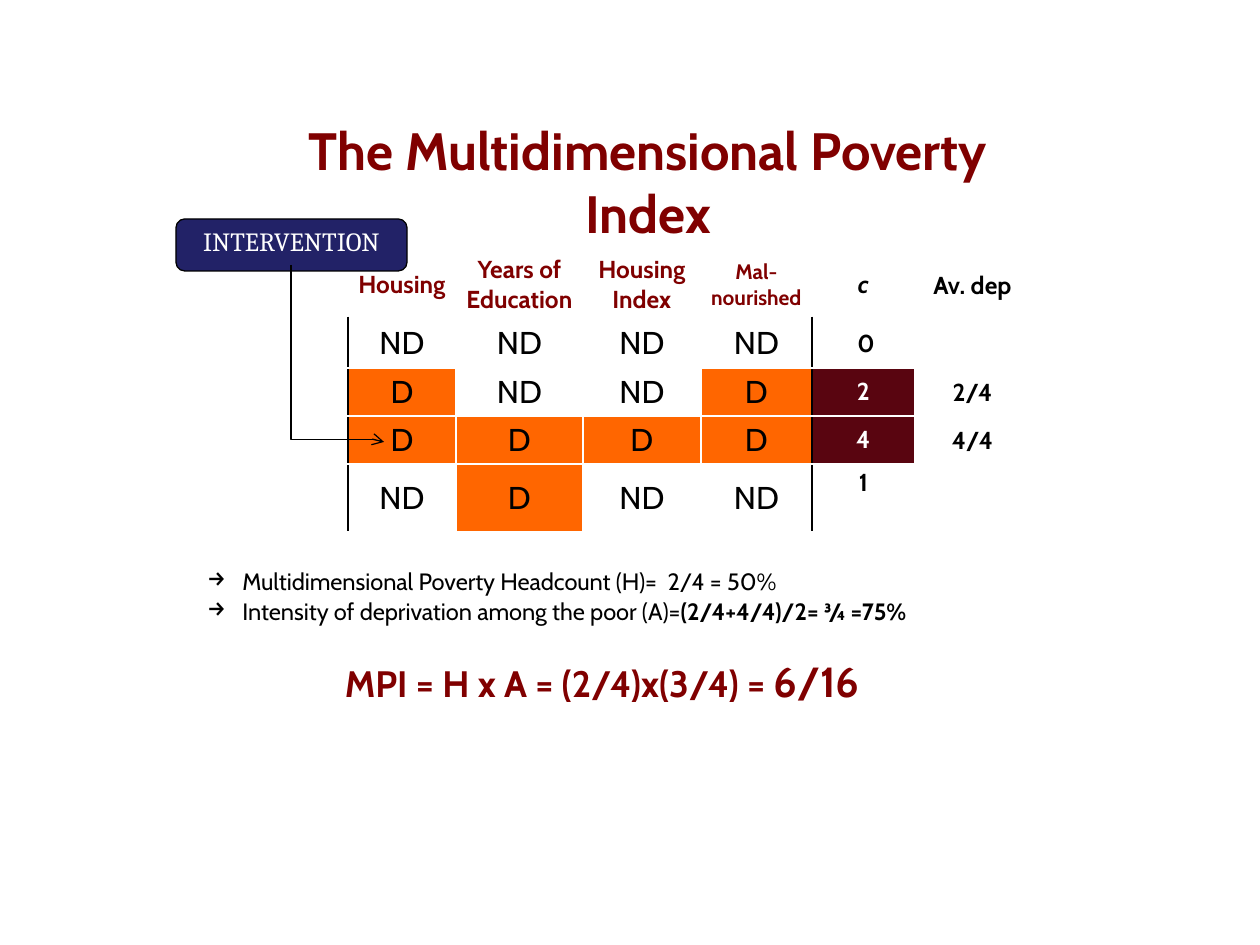
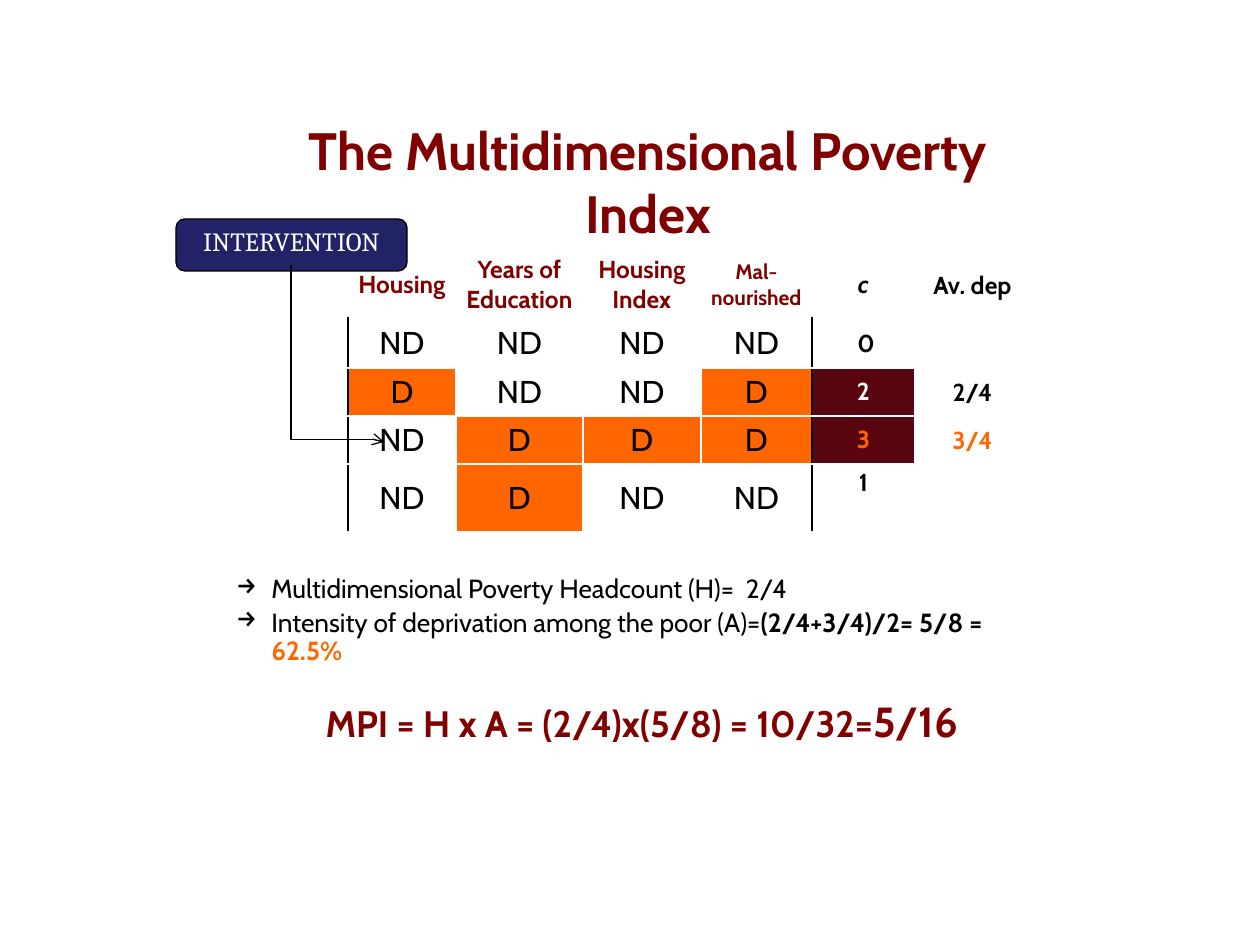
from dataclasses import dataclass
from itertools import product
from typing import NamedTuple

from lxml.etree import SubElement
from pptx import Presentation
from pptx.dml.color import RGBColor
from pptx.enum.shapes import MSO_CONNECTOR, MSO_SHAPE
from pptx.enum.text import MSO_ANCHOR, PP_ALIGN
from pptx.oxml.ns import qn
from pptx.util import Emu, Pt

EMU_PER_PX = 914400 / 126
PAGE_SIZE = (1260, 945)

MAROON = RGBColor(0x80, 0x00, 0x00)
WINE = RGBColor(0x59, 0x05, 0x10)
ORANGE = RGBColor(0xFF, 0x66, 0x00)
NAVY = RGBColor(0x22, 0x22, 0x67)
BLACK = RGBColor(0x00, 0x00, 0x00)
WHITE = RGBColor(0xFF, 0xFF, 0xFF)

MATRIX_ORIGIN = (274, 251)
MATRIX_COLUMNS = [74, 108, 127, 118, 111, 103]
MATRIX_ROWS = [68, 49, 48, 48, 68, 48]
AVERAGE_ORIGIN = (921, 252)
AVERAGE_COLUMNS = [103]
CELL_INSETS = {"margin_left": 9, "margin_right": 9, "margin_top": 4, "margin_bottom": 4}
DIMENSIONS = ["Housing", "Years of Education", "Housing Index", "Mal-nourished"]
PERSON_ROWS = range(1, 5)
POVERTY_CUTOFF = 2
BULLET_INDENT = 35


class Frame(NamedTuple):
    left: int
    top: int
    width: int
    height: int


class Span(NamedTuple):
    text: str
    size: float
    color: RGBColor = BLACK
    bold: bool = False
    italic: bool = False
    name: str = "Cabin"


@dataclass
class Scenario:
    """What changes in the index when the intervention reaches the third person."""
    third_person: list[str]
    average: str
    changed_color: RGBColor | None
    findings_frame: Frame
    findings_size: float
    headcount: str
    intensity: list[Span]
    index: list[Span]


SCENARIOS = [
    Scenario(
        ["D", "D", "D", "D"], "4/4", None,
        Frame(195, 564, 867, 155), 13.5,
        "Multidimensional Poverty Headcount (H)=  2/4 = 50%",
        [Span("(2/4+4/4)/2= ¾ =75%", 13.5, bold=True)],
        [Span("MPI = H x A = (2/4)x(3/4) = ", 21, MAROON, True),
         Span("6/16", 24, MAROON, True), Span("\t", 21, MAROON, True)],
    ),
    Scenario(
        ["ND", "D", "D", "D"], "3/4", ORANGE,
        Frame(224, 570, 844, 161), 15,
        "Multidimensional Poverty Headcount (H)=  2/4",
        [Span("(2/4+3/4)/2= 5/8 = ", 15, bold=True), Span("62.5%", 15, ORANGE, True)],
        [Span("MPI = H x A = (2/4)x(5/8) = 10/32=", 21, MAROON, True),
         Span("5/16", 24, MAROON, True), Span(" ", 21, MAROON, True)],
    ),
]


def px(length: float) -> Emu:
    return Emu(round(length * EMU_PER_PX))


def set_attributes(target, values: dict) -> None:
    for name, value in values.items():
        setattr(target, name, value)


def add_spans(para, spans: list[Span], **paragraph_format) -> None:
    set_attributes(para, paragraph_format)
    for span in spans:
        run = para.add_run()
        run.text = span.text
        font_format = span._asdict() | {"size": Pt(span.size)}
        del font_format["text"], font_format["color"]
        set_attributes(run.font, font_format)
        run.font.color.rgb = span.color


def add_text_box(page, frame: Frame):
    text = page.shapes.add_textbox(*map(px, frame)).text_frame
    text.word_wrap = True
    return text


def add_title(page) -> None:
    text = add_text_box(page, Frame(228, 122, 840, 118))
    text.vertical_anchor = MSO_ANCHOR.MIDDLE
    title = Span("The Multidimensional Poverty Index", 30, MAROON, True)
    add_spans(text.paragraphs[0], [title], alignment=PP_ALIGN.CENTER)


def add_plain_table(page, origin: tuple[int, int], columns: list[int], rows: list[int]):
    """Add a table without banding or fills and return it."""
    frame = Frame(*origin, sum(columns), sum(rows))
    table = page.shapes.add_table(len(rows), len(columns), *map(px, frame)).table
    set_attributes(table, {"first_row": False, "horz_banding": False})
    for column, width in zip(table.columns, columns):
        column.width = px(width)
    for row, height in zip(table.rows, rows):
        row.height = px(height)
    for cell in table.iter_cells():
        set_attributes(cell, {name: px(inset) for name, inset in CELL_INSETS.items()})
        cell.vertical_anchor = MSO_ANCHOR.MIDDLE
        cell.fill.background()
    return table


def write_cell(cell, span: Span, fill: RGBColor | None = None) -> None:
    add_spans(cell.text_frame.paragraphs[0], [span], alignment=PP_ALIGN.CENTER)
    if fill is not None:
        cell.fill.solid()
        cell.fill.fore_color.rgb = fill


def add_borders(cell, edges: dict[str, tuple[RGBColor, int]]) -> None:
    properties = cell._tc.get_or_add_tcPr()
    for position, (edge, (color, points)) in enumerate(edges.items()):
        line = SubElement(properties, qn(f"a:ln{edge}"), w=str(Pt(points)))
        SubElement(SubElement(line, qn("a:solidFill")), qn("a:srgbClr"), val=str(color))
        properties.insert(position, line)


def border_matrix(table) -> None:
    """Rule white lines, with black ones on both sides of the deprivation matrix."""
    for row, column in product(range(len(MATRIX_ROWS)), range(len(MATRIX_COLUMNS))):
        in_matrix = row in PERSON_ROWS
        add_borders(table.cell(row, column), {
            "L": (BLACK if in_matrix and column in (1, 5) else WHITE, 1),
            "R": (BLACK if in_matrix and column in (0, 4) else WHITE, 1),
            "T": (WHITE, 3 if row == 1 else 1),
            "B": (WHITE, 3 if row == 0 else 1),
        })


def add_matrix(page, scenario: Scenario) -> None:
    table = add_plain_table(page, MATRIX_ORIGIN, MATRIX_COLUMNS, MATRIX_ROWS)
    border_matrix(table)
    table.cell(1, 0).merge(table.cell(4, 0))
    for column, dimension in enumerate(DIMENSIONS, 1):
        size = 12 if dimension == "Mal-nourished" else 14
        write_cell(table.cell(0, column), Span(dimension, size, MAROON, True))
    write_cell(table.cell(0, 5), Span("c", 14, bold=True, italic=True))

    people = [
        ["ND", "ND", "ND", "ND"],
        ["D", "ND", "ND", "D"],
        scenario.third_person,
        ["ND", "D", "ND", "ND"],
    ]
    for row, statuses in zip(PERSON_ROWS, people):
        for column, status in enumerate(statuses, 1):
            write_cell(table.cell(row, column), Span(status, 18),
                       ORANGE if status == "D" else None)
        count = statuses.count("D")
        if count >= POVERTY_CUTOFF:
            color = scenario.changed_color if row == 3 else None
            write_cell(table.cell(row, 5), Span(str(count), 14, color or WHITE, True), WINE)
        else:
            label = str(count) if count else " 0"
            write_cell(table.cell(row, 5), Span(label, 14, bold=True))
    table.cell(4, 5).vertical_anchor = MSO_ANCHOR.TOP


def add_averages(page, scenario: Scenario) -> None:
    table = add_plain_table(page, AVERAGE_ORIGIN, AVERAGE_COLUMNS, MATRIX_ROWS[:5])
    write_cell(table.cell(0, 0), Span("Av. dep", 14, bold=True))
    write_cell(table.cell(2, 0), Span("2/4", 14, bold=True))
    changed = Span(scenario.average, 14, scenario.changed_color or BLACK, True)
    write_cell(table.cell(3, 0), changed)


def add_findings(page, scenario: Scenario) -> None:
    size = scenario.findings_size
    intensity = Span("Intensity of deprivation among the poor (A)=", size)
    text = add_text_box(page, scenario.findings_frame)
    bullets = [[Span(scenario.headcount, size)], [intensity, *scenario.intensity]]
    for number, spans in enumerate(bullets):
        para = text.add_paragraph() if number else text.paragraphs[0]
        properties = para._p.get_or_add_pPr()
        properties.set("marL", str(px(BULLET_INDENT)))
        properties.set("indent", str(-px(BULLET_INDENT)))
        SubElement(properties, qn("a:buChar"), char="→")
        add_spans(para, spans, line_spacing=0.9,
                  space_before=Pt(0.2 * size if number else 0))
    add_spans(text.add_paragraph(), scenario.index, line_spacing=0.9,
              space_before=Pt(20), alignment=PP_ALIGN.CENTER)


def add_intervention(page) -> None:
    frame = Frame(176, 219, 231, 52)
    box = page.shapes.add_shape(MSO_SHAPE.ROUNDED_RECTANGLE, *map(px, frame))
    box.shadow.inherit = False
    box.fill.solid()
    box.fill.fore_color.rgb = NAVY
    box.line.color.rgb = BLACK
    box.line.width = Pt(0.75)
    text = box.text_frame
    set_attributes(text, {name: px(inset) for name, inset in CELL_INSETS.items()})
    text.vertical_anchor = MSO_ANCHOR.TOP
    label = Span("INTERVENTION", 15, WHITE, name="Cambria")
    add_spans(text.paragraphs[0], [label], alignment=PP_ALIGN.CENTER)


def add_intervention_arrow(page) -> None:
    """Lead an elbow down from the label and right to the third person's housing."""
    arrow = page.shapes.add_connector(MSO_CONNECTOR.ELBOW, px(426), px(307), px(249), px(400))
    arrow.line.color.rgb = BLACK
    arrow.line.width = Pt(0.75)
    properties = arrow._element.spPr
    properties.find(qn("a:xfrm")).set("rot", str(270 * 60000))
    adjustments = properties.find(qn("a:prstGeom")).find(qn("a:avLst"))
    SubElement(adjustments, qn("a:gd"), name="adj1", fmla="val 98700")
    SubElement(properties.find(qn("a:ln")), qn("a:tailEnd"), type="arrow")
    SubElement(properties, qn("a:effectLst"))


def main() -> None:
    deck = Presentation()
    deck.slide_width, deck.slide_height = map(px, PAGE_SIZE)
    for scenario in SCENARIOS:
        page = deck.slides.add_slide(deck.slide_layouts[6])
        add_title(page)
        add_matrix(page, scenario)
        add_averages(page, scenario)
        add_findings(page, scenario)
        add_intervention(page)
        add_intervention_arrow(page)
    deck.save("out.pptx")


if __name__ == "__main__":
    main()
